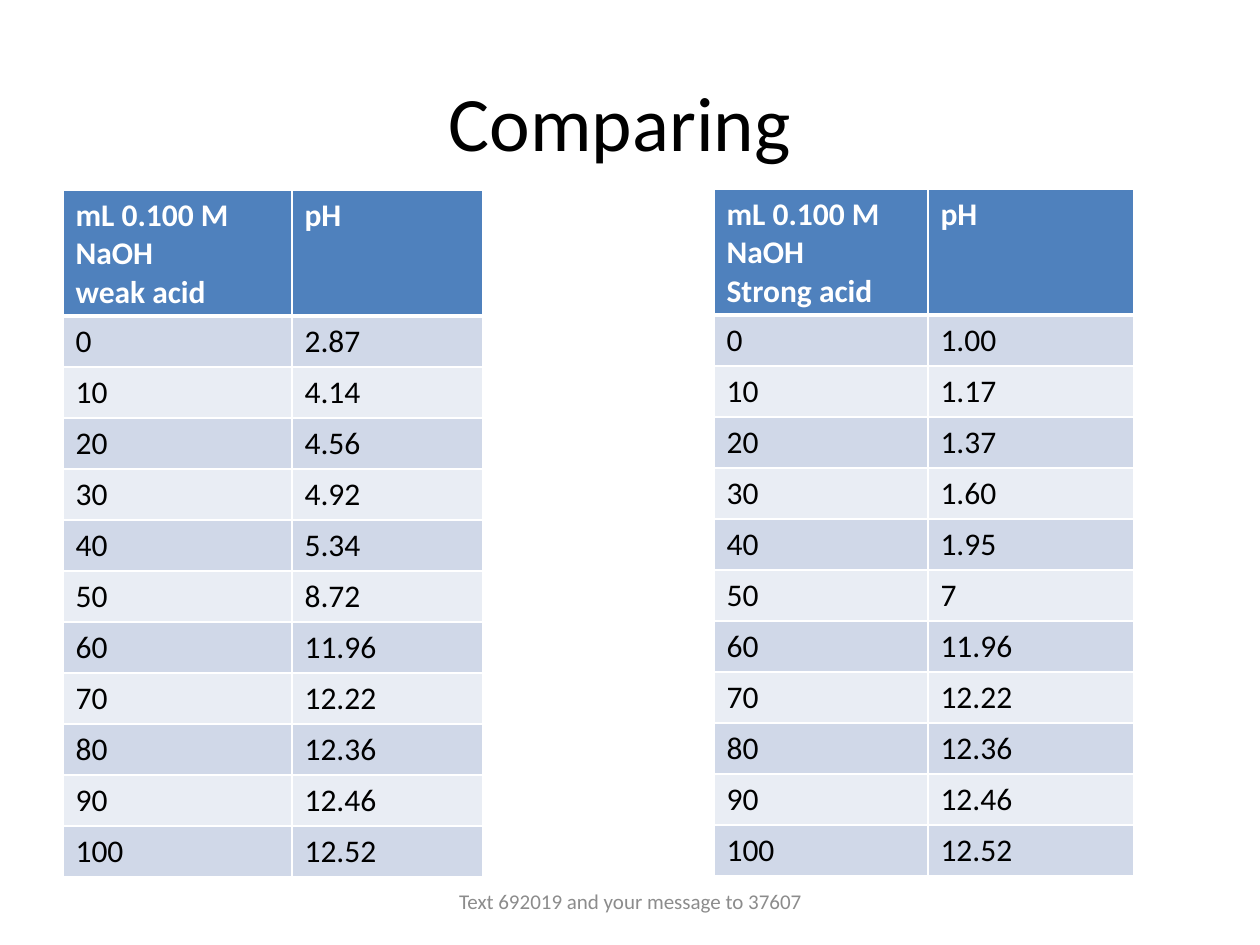
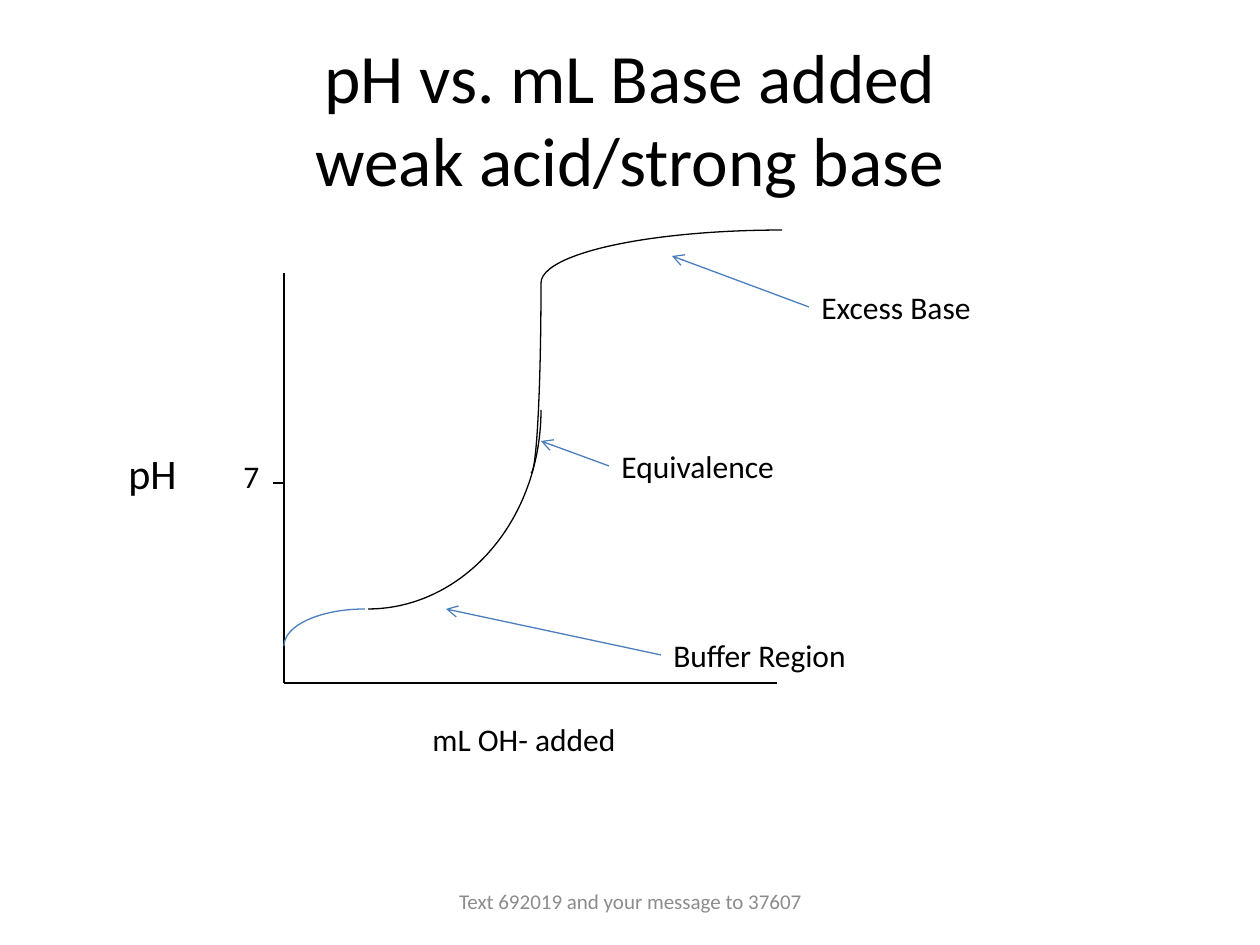
from dataclasses import dataclass

from lxml import etree
from pptx import Presentation
from pptx.dml.color import RGBColor
from pptx.enum.shapes import MSO_CONNECTOR, MSO_SHAPE
from pptx.enum.text import MSO_ANCHOR, MSO_AUTO_SIZE, PP_ALIGN
from pptx.oxml.ns import qn
from pptx.util import Emu, Pt

ARC, STRAIGHT = MSO_SHAPE.ARC, MSO_CONNECTOR.STRAIGHT
CENTER, LEFT = PP_ALIGN.CENTER, PP_ALIGN.LEFT
MIDDLE, TOP = MSO_ANCHOR.MIDDLE, MSO_ANCHOR.TOP
FIT_SHAPE = MSO_AUTO_SIZE.SHAPE_TO_FIT_TEXT

PX_PER_INCH = 126
FONT = "Calibri"
BLACK, WHITE, GREY = "000000", "FFFFFF", "8C8C8C"
HEADER_BLUE, LINE_BLUE = "4F81BD", "4B7EBC"
BANDS = ("D0D8E8", "E9EDF4")
FOOTER = "Text 692019 and your message to 37607"
LINE_WIDTH = 0.75
LEFT_SIDE = 1

HEADER_HEIGHT, ROW_HEIGHT = 126, 51
VOLUMES = range(0, 101, 10)


@dataclass(frozen=True)
class Titration:
    acid: str
    x: int
    y: int
    col_widths: tuple[int, int]
    ph_values: tuple[str, ...]


@dataclass(frozen=True)
class Label:
    text: str
    x: int
    y: int
    w: int
    h: int = 50
    size: int = 18


@dataclass(frozen=True)
class Callout:
    label: Label
    target: tuple[int, int]


@dataclass(frozen=True)
class QuarterArc:
    """Quarter of an ellipse, clockwise from start degrees (0 is right)."""
    cx: int
    cy: int
    rx: int
    ry: int
    start: int
    color: str = BLACK


AFTER_EQUIVALENCE = ("11.96", "12.22", "12.36", "12.46", "12.52")
TITRATIONS = (
    Titration("weak acid", 63, 190, (229, 191),
              ("2.87", "4.14", "4.56", "4.92", "5.34", "8.72", *AFTER_EQUIVALENCE)),
    Titration("Strong acid", 714, 189, (214, 206),
              ("1.00", "1.17", "1.37", "1.60", "1.95", "7", *AFTER_EQUIVALENCE)),
)

AXIS_X, AXIS_TOP, AXIS_Y, AXIS_RIGHT = 284, 273, 683, 777
TICK_Y, TICK_LENGTH = 483, 11
AXIS_LABELS = (
    Label("pH", 116, 441, 74, 63, 24),
    Label("mL OH- added", 420, 714, 210),
    Label("7", 231, 451, 42),
)
CURVE = (
    QuarterArc(368, 410, 173, 199, 0),
    QuarterArc(782, 283, 241, 53, 180),
    QuarterArc(531, 283, 10, 190, 0),
    QuarterArc(365, 646, 81, 37, 180, LINE_BLUE),
)
CALLOUTS = (
    Callout(Label("Buffer Region", 661, 630, 200), (446, 609)),
    Callout(Label("Equivalence", 609, 441, 180), (541, 441)),
    Callout(Label("Excess Base", 809, 282, 176), (672, 256)),
)


def px(n: int) -> Emu:
    return Emu(round(n * 914400 / PX_PER_INCH))


def rgb(color: str) -> RGBColor:
    return RGBColor.from_string(color)


def style_font(p, size: float, color: str, bold: bool = False) -> None:
    p.font.name = FONT
    p.font.size = Pt(size)
    p.font.bold = bold
    p.font.color.rgb = rgb(color)


def add_text(slide, text: str, x: int, y: int, w: int, h: int, size: float,
             color: str = BLACK, align=CENTER, anchor=MIDDLE, wrap: bool = True):
    sp = slide.shapes.add_textbox(px(x), px(y), px(w), px(h))
    tf = sp.text_frame
    tf.word_wrap = wrap
    tf.vertical_anchor = anchor
    p = tf.paragraphs[0]
    p.text = text
    p.alignment = align
    style_font(p, size, color)
    return sp


def add_label(slide, label: Label):
    sp = add_text(slide, label.text, label.x, label.y, label.w, label.h,
                  label.size, align=LEFT, anchor=TOP, wrap=False)
    sp.text_frame.auto_size = FIT_SHAPE
    return sp


def add_slide(prs, title: str, x: int, y: int, size: float):
    """Add a blank slide with the shared title and footer."""
    slide = prs.slides.add_slide(prs.slide_layouts[6])
    add_text(slide, title, x, y, 1134, 158, size)
    add_text(slide, FOOTER, 431, 876, 399, 50, 12, GREY)
    return slide


def add_line(slide, x1: int, y1: int, x2: int, y2: int,
             color: str = BLACK, arrow: bool = False):
    cxn = slide.shapes.add_connector(STRAIGHT, px(x1), px(y1), px(x2), px(y2))
    cxn.line.color.rgb = rgb(color)
    cxn.line.width = Pt(LINE_WIDTH)
    sp_pr = cxn.element.spPr
    if arrow:
        etree.SubElement(sp_pr.find(qn("a:ln")), qn("a:tailEnd"), type="arrow")
    etree.SubElement(sp_pr, qn("a:effectLst"))
    return cxn


def add_arc(slide, arc: QuarterArc) -> None:
    sp = slide.shapes.add_shape(ARC, px(arc.cx - arc.rx), px(arc.cy - arc.ry),
                                px(2 * arc.rx), px(2 * arc.ry))
    # Adjustments count 100000ths, angles 60000ths of a degree.
    sp.adjustments[0] = arc.start * 0.6
    sp.adjustments[1] = (arc.start + 90) * 0.6
    sp.shadow.inherit = False
    sp.fill.background()
    sp.line.color.rgb = rgb(arc.color)
    sp.line.width = Pt(LINE_WIDTH)


def add_callout(slide, callout: Callout) -> None:
    label = callout.label
    sp = add_label(slide, label)
    cxn = add_line(slide, label.x, label.y + label.h // 2, *callout.target,
                   LINE_BLUE, arrow=True)
    cxn.begin_connect(sp, LEFT_SIDE)


def set_borders(cell, top: int, bottom: int) -> None:
    """Draw white borders; widths in points, the sides are always 1."""
    tc_pr = cell._tc.get_or_add_tcPr()
    for side, width in (("L", 1), ("R", 1), ("T", top), ("B", bottom)):
        ln = etree.SubElement(tc_pr, qn(f"a:ln{side}"), w=str(Pt(width)))
        fill = etree.SubElement(ln, qn("a:solidFill"))
        etree.SubElement(fill, qn("a:srgbClr"), val=WHITE)


def add_titration_table(slide, titration: Titration) -> None:
    rows = [(f"mL 0.100 M NaOH\n{titration.acid}", "pH")]
    rows += [(str(v), ph) for v, ph in zip(VOLUMES, titration.ph_values)]
    height = HEADER_HEIGHT + ROW_HEIGHT * len(VOLUMES)
    table = slide.shapes.add_table(
        len(rows), 2, px(titration.x), px(titration.y),
        px(sum(titration.col_widths)), px(height)).table
    table.first_row = table.horz_banding = False
    for column, width in zip(table.columns, titration.col_widths):
        column.width = px(width)
    for i, texts in enumerate(rows):
        header = i == 0
        table.rows[i].height = px(HEADER_HEIGHT if header else ROW_HEIGHT)
        for j, text in enumerate(texts):
            cell = table.cell(i, j)
            cell.text = text
            for p in cell.text_frame.paragraphs:
                style_font(p, 18, WHITE if header else BLACK, header)
            set_borders(cell, 3 if i == 1 else 1, 3 if header else 1)
            cell.fill.solid()
            cell.fill.fore_color.rgb = rgb(HEADER_BLUE if header else BANDS[(i - 1) % 2])


def build_comparison(prs) -> None:
    slide = add_slide(prs, "Comparing", 53, 42, 44)
    for titration in TITRATIONS:
        add_titration_table(slide, titration)


def build_curve(prs) -> None:
    slide = add_slide(prs, "pH vs. mL Base added\vweak acid/strong base", 63, 38, 39.6)
    add_line(slide, AXIS_X, AXIS_TOP, AXIS_X, AXIS_Y)
    add_line(slide, AXIS_X, AXIS_Y, AXIS_RIGHT, AXIS_Y)
    add_line(slide, AXIS_X - TICK_LENGTH, TICK_Y, AXIS_X, TICK_Y)
    for label in AXIS_LABELS:
        add_label(slide, label)
    for arc in CURVE:
        add_arc(slide, arc)
    for callout in CALLOUTS:
        add_callout(slide, callout)


def main() -> None:
    prs = Presentation()
    prs.slide_width, prs.slide_height = px(1260), px(945)
    build_comparison(prs)
    build_curve(prs)
    prs.save("out.pptx")


if __name__ == "__main__":
    main()
